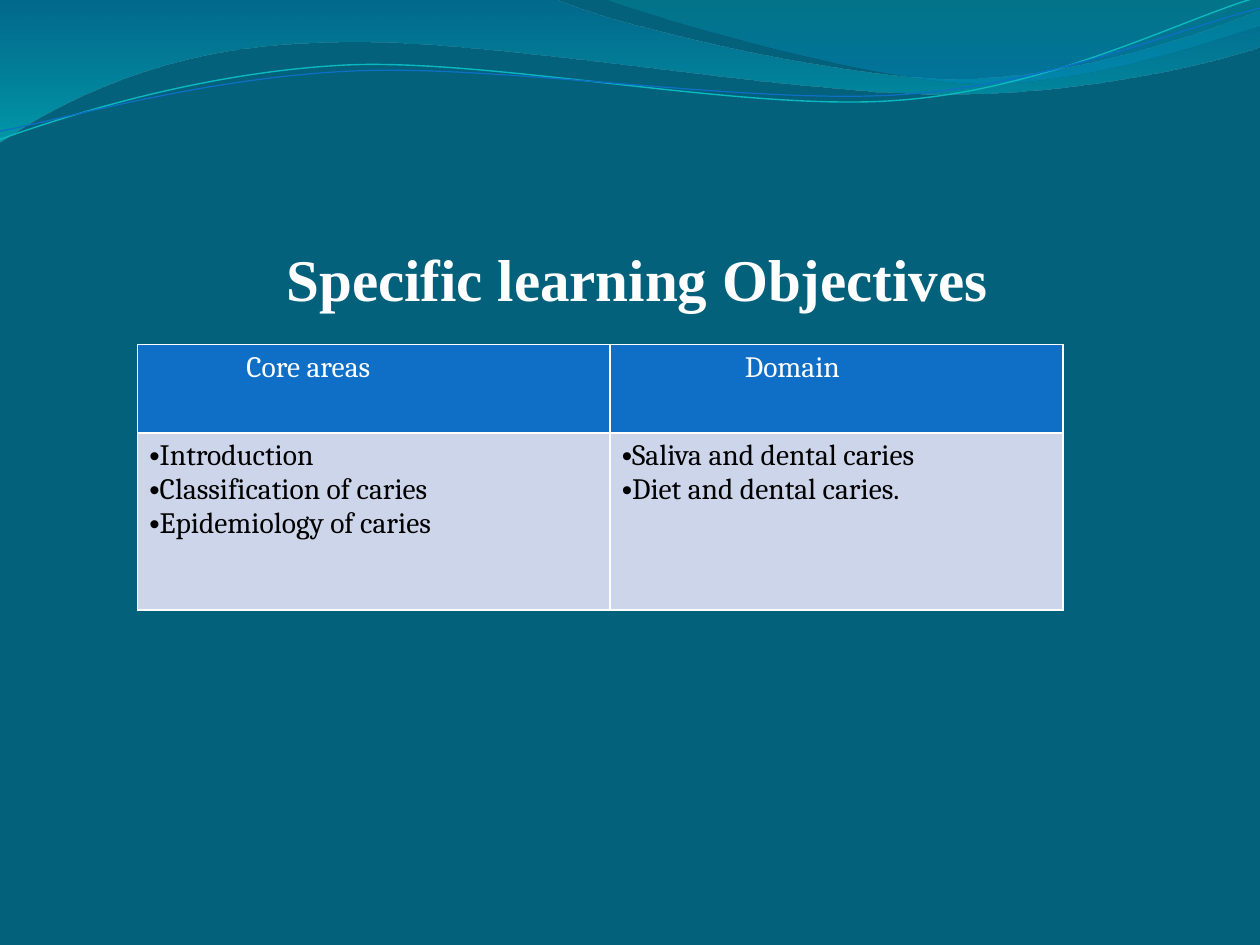
from lxml import etree
from pptx import Presentation
from pptx.dml.color import RGBColor
from pptx.enum.text import MSO_ANCHOR, MSO_AUTO_SIZE, PP_ALIGN
from pptx.oxml.ns import qn
from pptx.util import Cm, Pt

HUES = {
    "back": "04617B", "white": "FFFFFF", "black": "000000",
    "head": "0F6FC6", "body": "CCD5EA", "teal": "0AB8BF",
    "deep": "0074A1", "aqua": "00C6CF", "green": "00A1A9", "sea": "008BBF",
}
TITLE = "Specific learning Objectives"

# Table columns: heading, left margin of the heading (cm), width (cm), bullets
COLS = [
    ("Core areas", 2.34, 10.16,
     ["Introduction", "Classification of caries", "Epidemiology of caries"]),
    ("Domain", 2.9, 9.74,
     ["Saliva and dental caries", "Diet and dental caries."]),
]
ROWS = [1.9, 3.81]

# Waves, in inches: a start, then lines (2 numbers) or cubic curves (6 numbers).
# Stops are position, colour and opacity in per cent.
BANDS = [
    ([(0, 0), (4.7, -0.01), (5.07, 0.18, 7.08, 0.67, 8.09, 0.67),
      (9.1, 0.67, 10.22, 0.27, 10.67, 0.09), (10.68, 0.39),
      (10.49, 0.47, 9.28, 0.81, 7.96, 0.8), (6.63, 0.8, 4.07, 0.3, 2.74, 0.36),
      (1.38, 0.38, 0.49, 0.88, -0.01, 1.21)],
     [(0, "deep", 45), (100, "aqua", 55)]),
    ([(5.11, -0.01), (5.43, 0.12, 7.27, 0.66, 8.2, 0.7),
      (9.13, 0.74, 10.26, 0.34, 10.67, 0.22), (10.67, 0)],
     [(0, "green", 30), (80, "sea", 45)]),
]
LINES = [
    ([(0, 1.18), (0.51, 1, 1.68, 0.61, 2.95, 0.55),
      (4.22, 0.5, 6.32, 0.95, 7.6, 0.85), (8.88, 0.76, 10.01, 0.16, 10.64, -0.02)],
     "teal", 0.85),
    ([(0, 1.11), (0.5, 1.02, 1.75, 0.65, 3.02, 0.6),
      (4.29, 0.55, 6.37, 0.89, 7.65, 0.8), (8.92, 0.71, 10.04, 0.22, 10.67, 0.07)],
     "head", 0.75),
]


def rgb(name):
    return RGBColor.from_string(HUES[name])


def style(font, **vals):
    for key, val in vals.items():
        if key == "color":
            font.color.rgb = rgb(val)
        else:
            setattr(font, key, val)


def draw(shapes, route, close):
    """Lay every point as a line, then join each curve's three into one."""
    dots = [(Cm(2.54 * seg[i]), Cm(2.54 * seg[i + 1]))
            for seg in route for i in range(0, len(seg), 2)]
    pen = shapes.build_freeform(*dots[0])
    pen.add_line_segments(dots[1:], close=close)
    shape = pen.convert_to_shape()
    shape.shadow.inherit = False
    legs = iter(list(shape._element.iter(qn("a:lnTo"))))
    for seg in route[1:]:
        leg = next(legs)
        if len(seg) == 6:
            leg.addprevious(curve := etree.Element(qn("a:cubicBezTo")))
            for part in (leg, next(legs), next(legs)):
                curve.append(part[0])
                part.getparent().remove(part)
    return shape


def add_band(shapes, route, stops):
    shape = draw(shapes, route, True)
    shape.line.fill.background()
    shape.fill.gradient()
    shape.fill.gradient_angle = 270
    nodes = shape._element.iter(qn("a:gs"))
    for stop, node, (pos, hue, alpha) in zip(shape.fill.gradient_stops, nodes, stops):
        stop.color.rgb = rgb(hue)
        stop.position = pos / 100
        etree.SubElement(node[0], qn("a:alpha"), val=str(alpha * 1000))


def add_line(shapes, route, hue, width):
    shape = draw(shapes, route, False)
    shape.fill.background()
    shape.line.color.rgb = rgb(hue)
    shape.line.width = Pt(width)


def paint(cell, fill, ink, texts, bullet=False):
    cell.fill.solid()
    cell.fill.fore_color.rgb = rgb(fill)
    props = cell._tc.get_or_add_tcPr()
    for i, side in enumerate("LRTB"):
        edge = etree.Element(qn("a:ln" + side), w=str(Pt(1)))
        solid = etree.SubElement(edge, qn("a:solidFill"))
        etree.SubElement(solid, qn("a:srgbClr"), val=HUES["white"])
        props.insert(i, edge)
    frame = cell.text_frame
    for i, text in enumerate(texts):
        para = frame.paragraphs[0] if i == 0 else frame.add_paragraph()
        if bullet:
            mark = para._p.get_or_add_pPr()
            etree.SubElement(mark, qn("a:buFont"), typeface="Arial")
            etree.SubElement(mark, qn("a:buChar"), char="•")
        run = para.add_run()
        run.text = text
        style(run.font, size=Pt(18), name="Cambria", bold=False, color=ink)


def add_grid(shapes):
    wide = sum(col[2] for col in COLS)
    grid = shapes.add_table(len(ROWS), len(COLS), Cm(2.96), Cm(7.41),
                            Cm(wide), Cm(sum(ROWS))).table
    for row, high in zip(grid.rows, ROWS):
        row.height = Cm(high)
    for i, (head, left, width, items) in enumerate(COLS):
        grid.columns[i].width = Cm(width)
        paint(grid.cell(0, i), "head", "white", [head])
        grid.cell(0, i).margin_left = Cm(left)
        paint(grid.cell(1, i), "body", "black", items, bullet=True)


def add_title(title):
    title.left, title.top = Cm(1.27), Cm(5.08)
    title.width, title.height = Cm(24.88), Cm(1.8)
    frame = title.text_frame
    frame.text = TITLE
    for key, val in {"word_wrap": True, "auto_size": MSO_AUTO_SIZE.NONE,
                     "vertical_anchor": MSO_ANCHOR.MIDDLE}.items():
        setattr(frame, key, val)
    para = frame.paragraphs[0]
    para.alignment = PP_ALIGN.CENTER
    style(para.runs[0].font, size=Pt(36), name="Times New Roman",
          bold=True, color="white")


def main():
    deck = Presentation()
    deck.slide_width, deck.slide_height = Cm(27.1), Cm(20.32)
    slide = deck.slides.add_slide(deck.slide_layouts[5])
    slide.background.fill.solid()
    slide.background.fill.fore_color.rgb = rgb("back")

    # Waves along the top
    for route, stops in BANDS:
        add_band(slide.shapes, route, stops)
    for route, hue, width in LINES:
        add_line(slide.shapes, route, hue, width)

    # Title and table
    add_title(slide.shapes.title)
    add_grid(slide.shapes)
    deck.save("out.pptx")


if __name__ == "__main__":
    main()
